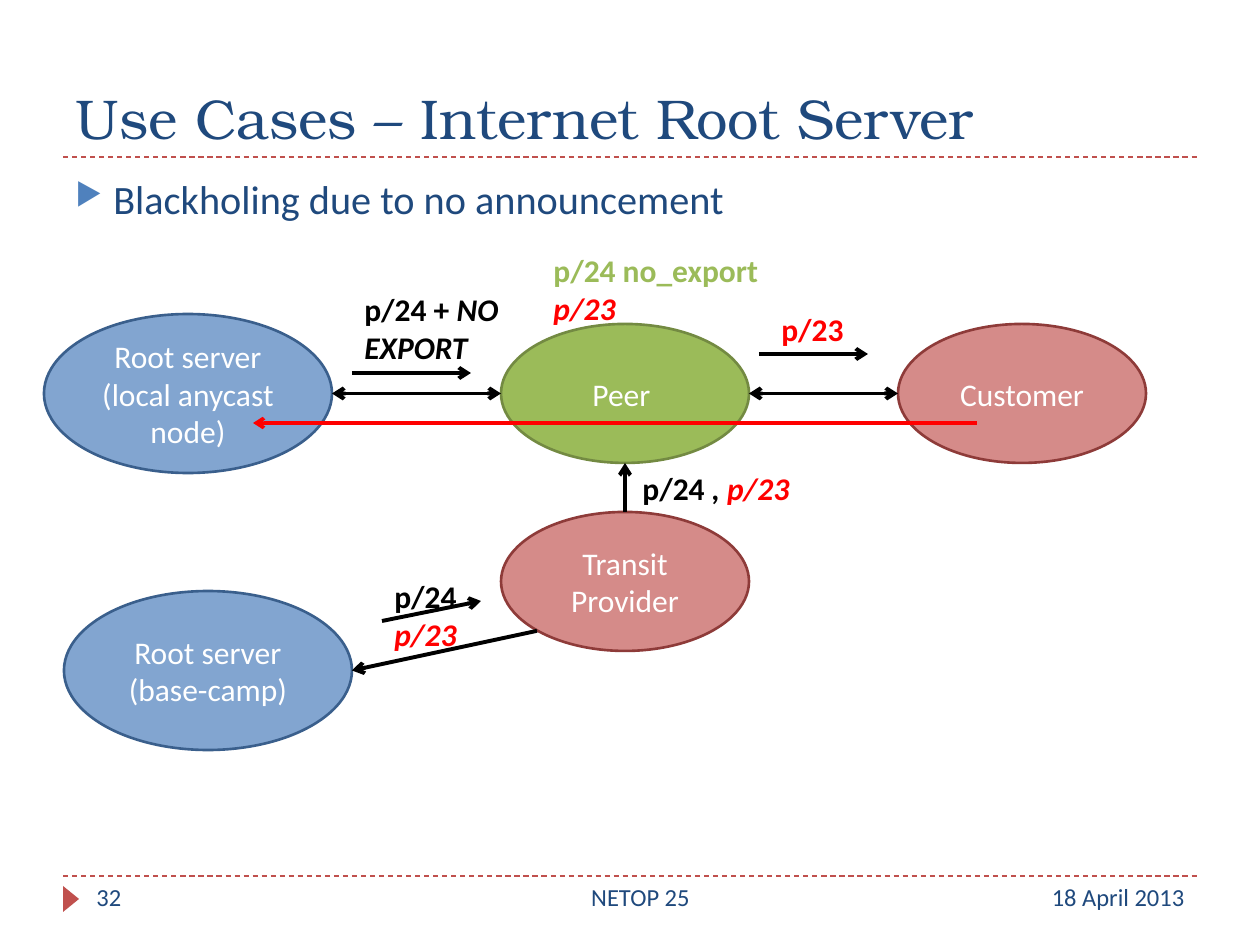
from pptx import Presentation
from pptx import util as u
from pptx.dml.color import RGBColor
from pptx.enum import dml, shapes, text
from pptx.oxml.ns import qn
from lxml import etree

NAVY = RGBColor(0x1F, 0x49, 0x7D)
BLUE, BLUE_EDGE = RGBColor(0x4F, 0x81, 0xBD), RGBColor(0x3A, 0x5F, 0x8C)
GREEN, GREEN_EDGE = RGBColor(0x9B, 0xBB, 0x59), RGBColor(0x73, 0x8A, 0x42)
BRICK, BRICK_EDGE = RGBColor(0xC0, 0x50, 0x4D), RGBColor(0x8E, 0x3B, 0x39)
RED = RGBColor(0xFF, 0, 0)
BLACK = RGBColor(0, 0, 0)
WHITE = RGBColor(0xFF, 0xFF, 0xFF)
LEFT, CENTER, RIGHT = text.PP_ALIGN.LEFT, text.PP_ALIGN.CENTER, text.PP_ALIGN.RIGHT

# Content: boxes are left, top, width, height in px
TITLE = "Use Cases – Internet Root Server"
BULLET = "Blackholing due to no announcement"
FOOTERS = [
    ("32", (84, 876, 273, 50), LEFT),
    ("NETOP 25", (399, 876, 483, 50), CENTER),
    ("18 April 2013", (882, 876, 315, 50), RIGHT),
]
ROOT_STYLE = (BLUE, BLUE_EDGE, 71)
PEER_STYLE = (GREEN, GREEN_EDGE, 100)
OTHER_STYLE = (BRICK, BRICK_EDGE, 66)
NODES = {
    "local": (["Root server", "(local anycast node)"], (44, 314, 288, 159), ROOT_STYLE),
    "peer": (["Peer "], (501, 324, 248, 139), PEER_STYLE),
    "customer": (["Customer"], (898, 324, 248, 139), OTHER_STYLE),
    "base": (["Root server", "(base-camp)"], (64, 591, 288, 159), ROOT_STYLE),
    "transit": (["Transit Provider"], (501, 512, 248, 139), OTHER_STYLE),
}
# Links: node and direction from its centre (x, y), both ends; two-way or not
DIAGONAL = 0.71
LINKS = [
    ("local", (1, 0), "peer", (-1, 0), True),
    ("peer", (1, 0), "customer", (-1, 0), True),
    ("transit", (0, -1), "peer", (0, 1), False),
    ("transit", (-DIAGONAL, DIAGONAL), "base", (1, 0), False),
]
# Announcements and the traffic path: start, end, colour, width in points
FLOWS = [
    ((352, 373), (471, 373), BLACK, 2.25),
    ((759, 354), (868, 354), BLACK, 2.25),
    ((382, 621), (481, 601), BLACK, 2.25),
    ((977, 423), (253, 423), RED, 2),
]
# Labels: paragraphs of (text, colour, italic) runs
LABELS = [
    ([[("p/24 + ", BLACK, False), ("NO EXPORT", BLACK, True)]], (352, 284, 228, 89)),
    ([[("p/24", BLACK, False)], [("p/23", RED, True)]], (382, 571, 149, 89)),
    ([[("p/23", RED, False)]], (769, 304, 99, 50)),
    ([[("p/24 no_export", GREEN, False)], [("p/23", RED, True)]], (541, 245, 525, 89)),
    ([[("p/24 ", BLACK, False), (",", BLACK, True), (" p/23", RED, True)]],
     (630, 463, 198, 50)),
]

prs = Presentation()
prs.slide_width, prs.slide_height = u.Inches(10), u.Inches(7.5)
slide = prs.slides.add_slide(prs.slide_layouts[6])


def px(n):
    return u.Inches(n / 126)


def emu(box):
    return [px(n) for n in box]


def child(parent, tag, **attrs):
    return etree.SubElement(parent, qn(tag), attrs)


def write(frame, paragraphs, size=18, font="Calibri", color=NAVY, bold=False,
          align=LEFT, anchor=text.MSO_ANCHOR.TOP):
    """Fill a frame; a paragraph is a string or a list of (text, colour, italic)."""
    frame.word_wrap = True
    frame.vertical_anchor = anchor
    for i, runs in enumerate(paragraphs):
        p = frame.paragraphs[0] if i == 0 else frame.add_paragraph()
        p.alignment = align
        if isinstance(runs, str):
            runs = [(runs, color, False)]
        for words, run_color, italic in runs:
            r = p.add_run()
            r.text = words
            r.font.size, r.font.name = u.Pt(size), font
            r.font.bold, r.font.italic = bold, italic
            r.font.color.rgb = run_color


def text_box(paragraphs, box, **fmt):
    frame = slide.shapes.add_textbox(*emu(box)).text_frame
    write(frame, paragraphs, **fmt)
    return frame


def shape(kind, box, fill, edge=None, opacity=100):
    s = slide.shapes.add_shape(kind, *emu(box))
    s.shadow.inherit = False
    s.fill.solid()
    s.fill.fore_color.rgb = fill
    if opacity < 100:
        rgb = s.fill._xPr.find(qn("a:solidFill"))[0]
        child(rgb, "a:alpha", val=str(opacity * 1000))
    if edge is None:
        s.line.fill.background()
    else:
        s.line.color.rgb, s.line.width = edge, u.Pt(1.5)
    return s


def line(start, end, color, width, ends=(), dash=None):
    c = slide.shapes.add_connector(shapes.MSO_CONNECTOR.STRAIGHT, *emu(start + end))
    c.line.color.rgb, c.line.width = color, u.Pt(width)
    if dash:
        c.line.dash_style = dash
    for tag in ends:
        child(c.line._get_or_add_ln(), tag, type="arrow")
    child(c._element.spPr, "a:effectLst")


def rim(node, direction):
    x, y, w, h = NODES[node][1]
    return (x + w * (1 + direction[0]) / 2, y + h * (1 + direction[1]) / 2)


# Rules and footer
for y in (876, 157):
    line((63, y), (1197, y), BRICK, 0.75, dash=dml.MSO_LINE.DASH)
marker = shape(shapes.MSO_SHAPE.ISOSCELES_TRIANGLE, (58, 891, 26, 16), BRICK)
marker.rotation = 90
for words, box, align in FOOTERS:
    text_box([words], box, size=14, align=align)

# Title and bullet
text_box([TITLE], (63, 21, 1134, 136), size=32, font="TeX Gyre Bonum",
         anchor=text.MSO_ANCHOR.BOTTOM)
bullet = text_box([BULLET], (63, 168, 1134, 680), size=23).paragraphs[0]
bullet.space_before = u.Pt(6)
props = bullet._p.get_or_add_pPr()
props.set("marL", str(px(38)))
props.set("indent", str(-px(38)))
child(child(props, "a:buClr"), "a:srgbClr", val=str(BLUE))
child(props, "a:buSzPct", val="76000")
child(props, "a:buChar", char="▶")

# Network nodes
for words, box, style in NODES.values():
    node = shape(shapes.MSO_SHAPE.OVAL, box, *style)
    write(node.text_frame, words, color=WHITE, align=CENTER,
          anchor=text.MSO_ANCHOR.MIDDLE)

# Links, flows and their labels
for a, a_side, b, b_side, two_way in LINKS:
    ends = ("a:headEnd", "a:tailEnd") if two_way else ("a:tailEnd",)
    line(rim(a, a_side), rim(b, b_side), BLACK, 2.25, ends)
for start, end, color, width in FLOWS:
    line(start, end, color, width, ("a:tailEnd",))
for paragraphs, box in LABELS:
    text_box(paragraphs, box, bold=True)

prs.save("out.pptx")
